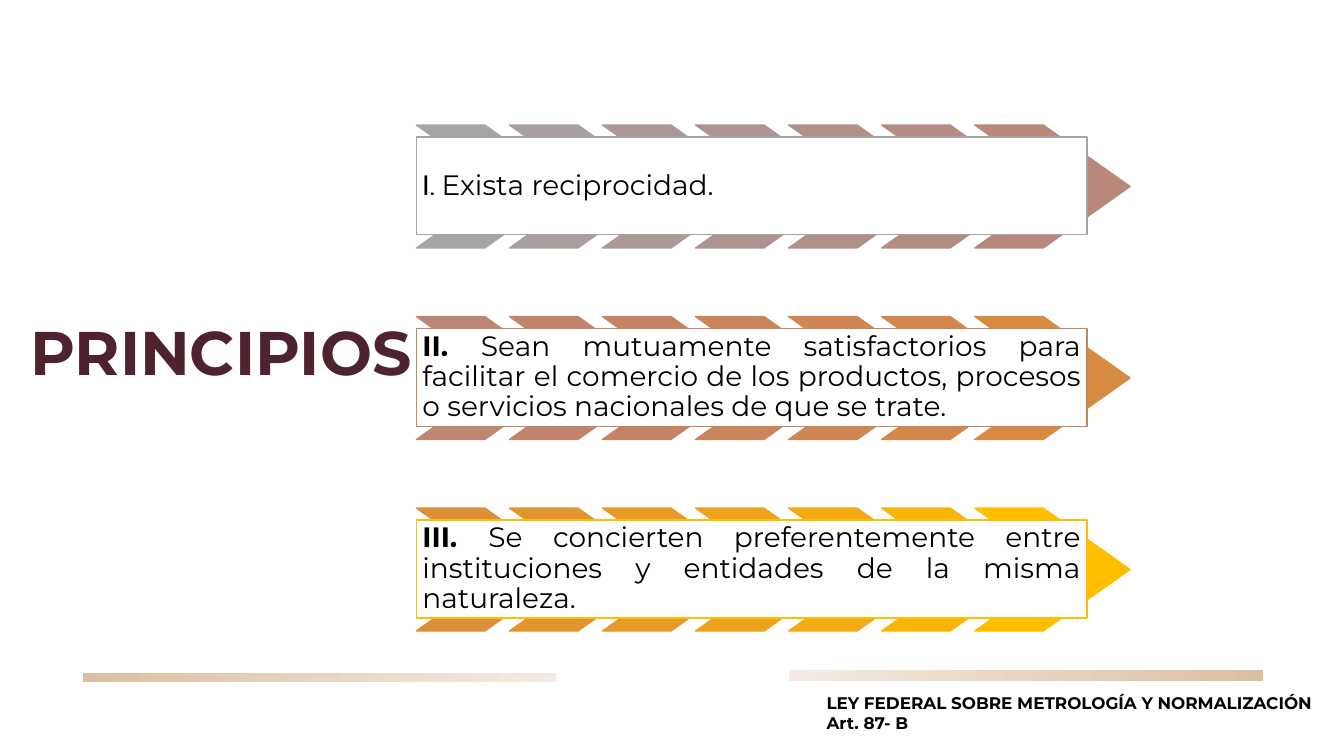
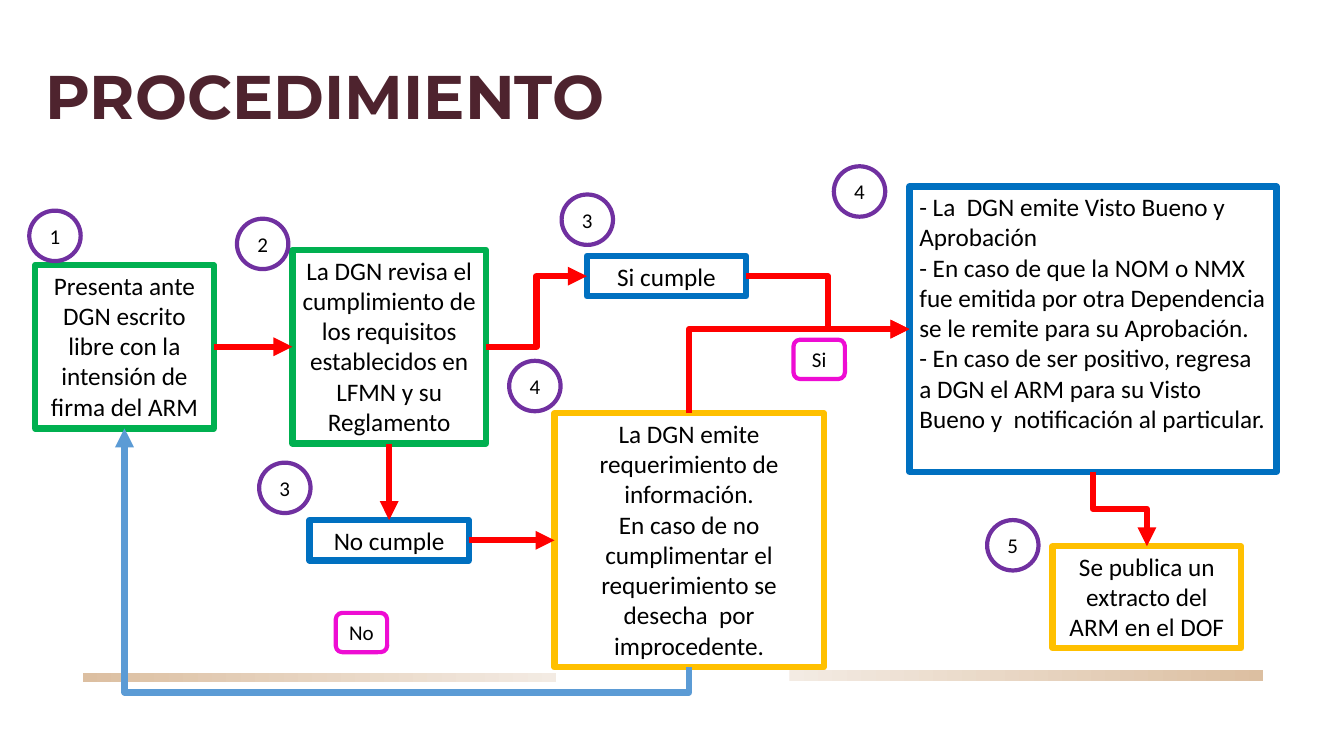
import colorsys

import lxml.etree
import pptx
import pptx.dml.color
import pptx.enum.shapes
import pptx.enum.text
import pptx.oxml.ns
import pptx.util

Inches = pptx.util.Inches
SHAPE = pptx.enum.shapes.MSO_SHAPE
CONNECTOR = pptx.enum.shapes.MSO_CONNECTOR
ALIGN = pptx.enum.text.PP_ALIGN
ANCHOR = pptx.enum.text.MSO_ANCHOR
qn = pptx.oxml.ns.qn

BLACK, WHITE, WINE = "000000", "FFFFFF", "4E232E"
SAND, CREAM = "DCBFA1", "F3EBE3"
GREEN, BLUE, AMBER, RED = "00B050", "0070C0", "FFC000", "FF0000"
SKY, PURPLE, PINK = "5B9BD5", "7030A0", "EE0CD3"
HEAD_FONT, BODY_FONT = "Montserrat", "Calibri"

BANDS = [
    ((0.82, 6.68, 4.7, 0.09), (SAND, CREAM)),
    ((7.83, 6.65, 4.7, 0.11), (CREAM, SAND)),
]

PRINCIPLES = [
    ("I. ", "Exista reciprocidad.", "Cabin", False, ALIGN.LEFT),
    ("II. ", "Sean mutuamente satisfactorios para facilitar el comercio de los "
     "productos, procesos o servicios nacionales de que se trate.",
     HEAD_FONT, True, ALIGN.JUSTIFY),
    ("III. ", "Se concierten preferentemente entre instituciones y entidades de "
     "la misma naturaleza.", HEAD_FONT, True, ALIGN.JUSTIFY),
]
LAW = ["LEY FEDERAL SOBRE METROLOGÍA Y NORMALIZACIÓN", "Art. 87- B"]

STEPS = {
    "solicitud": ((0.35, 2.63, 1.77, 1.62), GREEN, [
        "Presenta ante DGN escrito libre con la intensión de firma del ARM"]),
    "revision": ((2.9, 2.48, 1.92, 1.92), GREEN, [
        "La DGN revisa el cumplimiento de los requisitos establecidos en LFMN "
        "y su Reglamento"]),
    "cumple": ((5.82, 2.54, 1.58, 0.4), BLUE, ["Si cumple"]),
    "no_cumple": ((3.07, 5.16, 1.58, 0.4), BLUE, ["No cumple"]),
    "requerimiento": ((5.5, 4.1, 2.67, 2.52), AMBER, [
        "La DGN emite requerimiento de información.",
        "En caso de no cumplimentar el requerimiento se desecha  por "
        "improcedente."]),
    "aprobacion": ((9.02, 1.85, 3.64, 2.83), BLUE, [
        "- La  DGN emite Visto Bueno y Aprobación",
        "- En caso de que la NOM o NMX fue emitida por otra Dependencia se le "
        "remite para su Aprobación.",
        "- En caso de ser positivo, regresa a DGN el ARM para su Visto Bueno y  "
        "notificación al particular."]),
    "publicacion": ((10.44, 5.42, 1.87, 1.01), AMBER, [
        "Se publica un extracto del ARM en el DOF"]),
}
LEFT_ALIGNED = {"aprobacion"}

TOP, LEFT, BOTTOM, RIGHT = range(4)
FLOWS = [
    ("solicitud", RIGHT, "revision", LEFT, RED, "line", None),
    ("revision", RIGHT, "cumple", LEFT, RED, "bentConnector3", None),
    ("revision", BOTTOM, "no_cumple", TOP, RED, "line", None),
    ("no_cumple", RIGHT, "requerimiento", LEFT, RED, "line", None),
    ("cumple", RIGHT, "aprobacion", LEFT, RED, "bentConnector3", None),
    ("requerimiento", TOP, "aprobacion", LEFT, RED, "bentConnector2", None),
    ("aprobacion", BOTTOM, "publicacion", TOP, RED, "bentConnector3", None),
    ("requerimiento", BOTTOM, "solicitud", BOTTOM, SKY, "bentConnector3", -10500),
]

STEP_NUMBERS = [
    ("1", 0.29, 2.09), ("2", 2.35, 2.17), ("3", 5.57, 1.93), ("3", 2.57, 4.59),
    ("4", 8.27, 1.65), ("4", 5.05, 3.58), ("5", 9.79, 5.16),
]
ANSWERS = [("No", 3.33, 6.08), ("Si", 7.87, 3.37)]


def rgb(value):
    return pptx.dml.color.RGBColor.from_string(value)


def style(font, size, name, color=BLACK, bold=False):
    font.size = pptx.util.Pt(size)
    font.name = name
    font.bold = bold
    font.color.rgb = rgb(color)


def add_outline(slide, kind, box, line, width, fill=None):
    shape = slide.shapes.add_shape(kind, *map(Inches, box))
    shape.shadow.inherit = False
    if fill:
        shape.fill.solid()
        shape.fill.fore_color.rgb = rgb(fill)
    else:
        shape.fill.background()
    shape.line.color.rgb = rgb(line)
    shape.line.width = pptx.util.Pt(width)
    return shape


def write(shape, paragraphs, size, name, align, anchor=ANCHOR.TOP, bold=False):
    frame = shape.text_frame
    frame.word_wrap = True
    frame.vertical_anchor = anchor
    frame.text = "\n".join(paragraphs)
    for paragraph in frame.paragraphs:
        paragraph.alignment = align
        style(paragraph.font, size, name, bold=bold)


def set_margins(frame, margin):
    frame.margin_left = frame.margin_right = Inches(margin)
    frame.margin_top = frame.margin_bottom = Inches(margin)


def new_slide(deck, heading, box, anchor):
    slide = deck.slides.add_slide(deck.slide_layouts[5])
    title = slide.shapes.title
    title.left, title.top, title.width, title.height = map(Inches, box)
    frame = title.text_frame
    frame.text = heading
    frame.word_wrap = True
    frame.auto_size = pptx.enum.text.MSO_AUTO_SIZE.NONE
    frame.vertical_anchor = anchor
    frame.paragraphs[0].alignment = ALIGN.LEFT
    frame.paragraphs[0].line_spacing = 0.9
    style(frame.paragraphs[0].runs[0].font, 44, HEAD_FONT, WINE, True)
    for band_box, colors in BANDS:
        band = slide.shapes.add_shape(SHAPE.RECTANGLE, *map(Inches, band_box))
        band.shadow.inherit = False
        band.line.fill.background()
        band.fill.gradient()
        band.fill.gradient_angle = 0
        for stop, color in zip(band.fill.gradient_stops, colors):
            stop.color.rgb = rgb(color)
    return slide


def ramp(share):
    start, end = (0, 0.647, 0), (0.125, 0.5, 1)
    hls = [a + (b - a) * share for a, b in zip(start, end)]
    return "".join(f"{round(part * 255):02X}" for part in colorsys.hls_to_rgb(*hls))


def add_principles(slide):
    per_row = 7
    last = per_row * len(PRINCIPLES) - 1
    for row, (numeral, sentence, font, bold, align) in enumerate(PRINCIPLES):
        top = 1.24 + 1.9 * row
        for column in range(per_row):
            color = ramp((row * per_row + column) / last)
            chevron = add_outline(slide, SHAPE.CHEVRON,
                                  (4.13 + 0.923 * column, top, 1.54, 1.22),
                                  color, 1, color)
            chevron.adjustments[0] = 0.706
        card = add_outline(slide, SHAPE.RECTANGLE, (4.13, top + 0.12, 6.65, 0.97),
                           ramp(row / (len(PRINCIPLES) - 1)), 1, WHITE)
        write(card, [numeral], 20, HEAD_FONT, align, ANCHOR.MIDDLE)
        set_margins(card.text_frame, 0.06)
        paragraph = card.text_frame.paragraphs[0]
        paragraph.line_spacing = 0.9
        style(paragraph.runs[0].font, 20, font, bold=bold)
        body = paragraph.add_run()
        body.text = sentence
        style(body.font, 20, HEAD_FONT)


def turn_vertical(connector):
    x1, y1 = connector.begin_x, connector.begin_y
    x2, y2 = connector.end_x, connector.end_y
    width, height = abs(y2 - y1), abs(x2 - x1)
    connector.left = (x1 + x2 - width) // 2
    connector.top = (y1 + y2 - height) // 2
    connector.width, connector.height = width, height
    xfrm = connector._element.spPr.find(qn("a:xfrm"))
    xfrm.set("rot", "5400000")
    xfrm.set("flipH", str(int(y1 > y2)))
    xfrm.set("flipV", str(int(x1 < x2)))


def add_flow(slide, boxes, flow):
    source, source_side, target, target_side, color, geometry, bend = flow
    kind = CONNECTOR.STRAIGHT if geometry == "line" else CONNECTOR.ELBOW
    arrow = slide.shapes.add_connector(kind, 0, 0, 0, 0)
    arrow.begin_connect(boxes[source], source_side)
    arrow.end_connect(boxes[target], target_side)
    properties = arrow._element.spPr
    if geometry != "line":
        preset = properties.find(qn("a:prstGeom"))
        preset.set("prst", geometry)
        if bend is not None:
            values = preset.find(qn("a:avLst"))
            if values is None:
                values = lxml.etree.SubElement(preset, qn("a:avLst"))
            lxml.etree.SubElement(values, qn("a:gd"), name="adj1", fmla=f"val {bend}")
        if source_side in (TOP, BOTTOM):
            turn_vertical(arrow)
    arrow.line.color.rgb = rgb(color)
    arrow.line.width = pptx.util.Pt(4.5)
    lxml.etree.SubElement(properties.find(qn("a:ln")), qn("a:tailEnd"), type="triangle")
    lxml.etree.SubElement(properties, qn("a:effectLst"))


def add_procedure(slide):
    boxes = {}
    for key, (box, color, paragraphs) in STEPS.items():
        boxes[key] = add_outline(slide, SHAPE.RECTANGLE, box, color, 4.5)
        align = ALIGN.LEFT if key in LEFT_ALIGNED else ALIGN.CENTER
        write(boxes[key], paragraphs, 18, BODY_FONT, align)
    for flow in FLOWS:
        add_flow(slide, boxes, flow)
    for labels, kind, height, color in (
            (STEP_NUMBERS, SHAPE.OVAL, 0.5, PURPLE),
            (ANSWERS, SHAPE.ROUNDED_RECTANGLE, 0.39, PINK)):
        for label, left, top in labels:
            badge = add_outline(slide, kind, (left, top, 0.51, height), color, 3)
            write(badge, [label], 15, BODY_FONT, ALIGN.CENTER, ANCHOR.MIDDLE)
            set_margins(badge.text_frame, 0)


def main():
    deck = pptx.Presentation()
    deck.slide_width, deck.slide_height = Inches(13.33), Inches(7.5)

    principles = new_slide(deck, "PRINCIPIOS", (0.2, 3.13, 4.3, 0.8), ANCHOR.MIDDLE)
    add_principles(principles)
    law = principles.shapes.add_textbox(*map(Inches, (8.1, 6.82, 5.12, 0.5)))
    write(law, LAW, 12, HEAD_FONT, ALIGN.JUSTIFY, bold=True)

    procedure = new_slide(deck, "PROCEDIMIENTO", (0.35, 0.54, 11.5, 0.83), ANCHOR.BOTTOM)
    add_procedure(procedure)

    deck.save("out.pptx")


if __name__ == "__main__":
    main()
